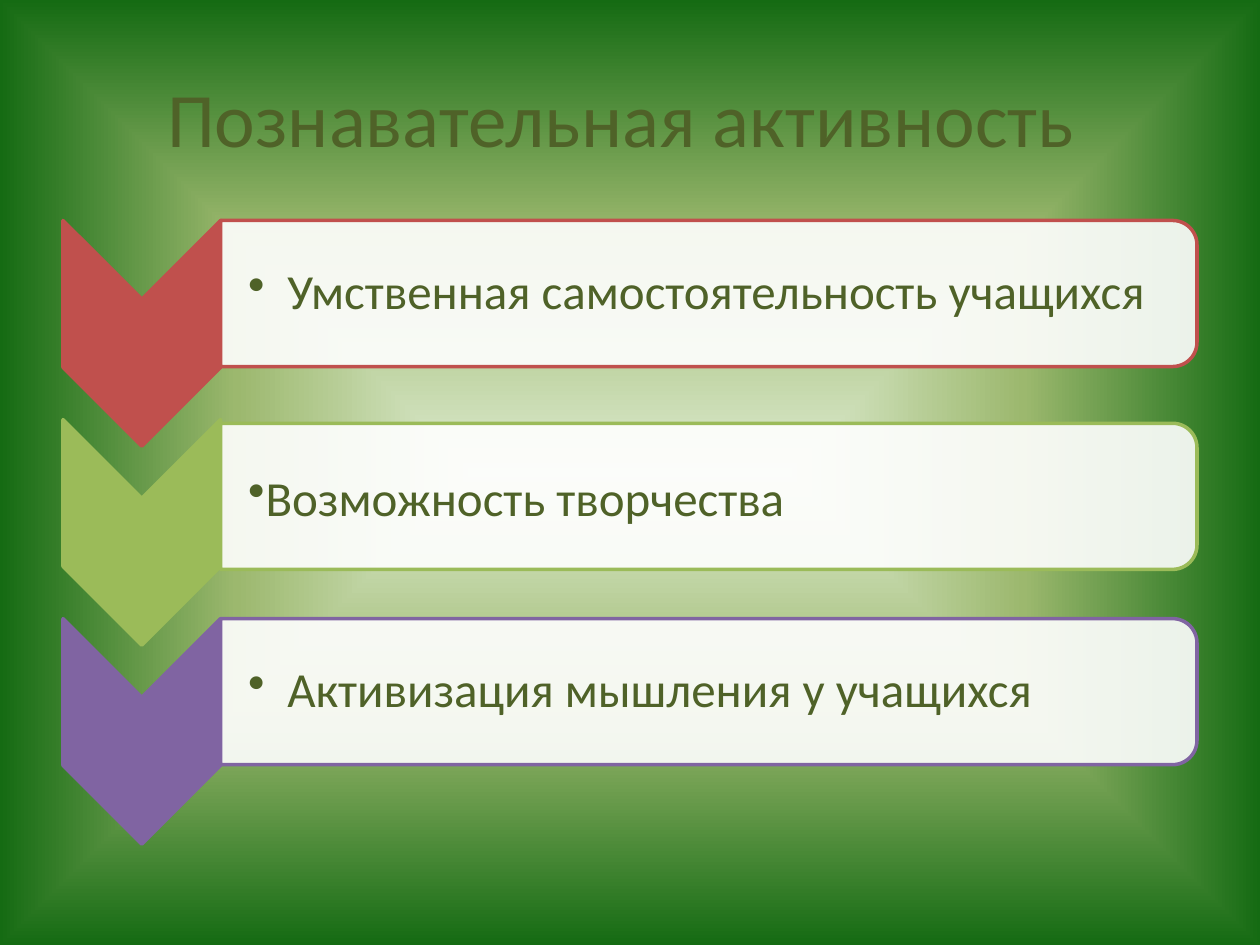
from collections import namedtuple

from pptx import Presentation
from pptx.dml.color import RGBColor
from pptx.enum.shapes import MSO_SHAPE as Preset
from pptx.enum.text import MSO_ANCHOR as Anchor, PP_ALIGN as Align
from pptx.oxml import parse_xml
from pptx.oxml.ns import nsdecls, qn
from pptx.util import Inches, Pt

Box = namedtuple("Box", "left top width height")

# Grid of 40 columns by 30 rows, square cells
COLUMNS, ROWS, CELL = 40, 30, Inches(0.25)
FONT, INK, WHITE = "Calibri", "4F6228", "FFFFFF"
BACKGROUND = [(0, "DDEBCF"), (50, "9CB86E"), (100, "156B13")]

# Row pitch, and the sizes of the parts of one step
PITCH, CHEVRON_WIDTH, CHEVRON_HEIGHT, PANEL_HEIGHT = 6.32, 5, 7.16, 4.64
INDENT = Inches(0.31)

# Label, colour, panel shift in rows, hanging bullet
STEPS = [
    ("Умственная самостоятельность учащихся", "C0504D", 0, True),
    ("Возможность творчества", "9BBB59", 0.12, False),
    ("Активизация мышления у учащихся", "8064A2", 0, True),
]


def color(value):
    return RGBColor.from_string(value)


def cells(box):
    return [round(length * CELL) for length in box]


def paint_background(page):
    stops = "".join(
        f'<a:gs pos="{share * 1000}"><a:srgbClr val="{value}"/></a:gs>'
        for share, value in BACKGROUND)
    page.element.cSld.insert(0, parse_xml(
        f'<p:bg {nsdecls("p", "a")}><p:bgPr><a:gradFill><a:gsLst>{stops}</a:gsLst>'
        '<a:path path="shape"><a:fillToRect l="50000" t="50000" r="50000" b="50000"/>'
        '</a:path></a:gradFill><a:effectLst/></p:bgPr></p:bg>'))


def add_turned(page, preset, box, fill, line):
    """Add a preset turned a quarter clockwise so that it covers the box."""
    left = box.left + (box.width - box.height) / 2
    top = box.top + (box.height - box.width) / 2
    shape = page.shapes.add_shape(
        preset, *cells(Box(left, top, box.height, box.width)))
    shape.rotation = 90
    shape.shadow.inherit = False
    shape.fill.solid()
    shape.fill.fore_color.rgb = color(fill)
    shape.line.color.rgb = color(line)
    shape.line.width = Pt(2)
    return shape


def add_text(page, box, text, size, margins, align):
    frame = page.shapes.add_textbox(*cells(box)).text_frame
    settings = {"word_wrap": True, "vertical_anchor": Anchor.MIDDLE}
    sides = ("left", "top", "right", "bottom")
    settings.update({f"margin_{side}": Inches(gap) for side, gap in zip(sides, margins)})
    for name, value in settings.items():
        setattr(frame, name, value)
    para = frame.paragraphs[0]
    para.alignment = align
    span = para.add_run()
    span.text = text
    for name, value in {"name": FONT, "size": Pt(size)}.items():
        setattr(span.font, name, value)
    span.font.color.rgb = color(INK)
    return para


def add_bullet(para, hanging):
    props = para._p.get_or_add_pPr()
    indent = INDENT if hanging else 0
    props.set("marL", str(indent))
    props.set("indent", str(-indent))
    if hanging:
        para.line_spacing = 0.9
        para.space_after = Pt(4.2)
    props.append(parse_xml(f'<a:buChar {nsdecls("a")} char="•"/>'))


def add_step(page, box, label, accent, shift, hanging):
    # Chevron pointing down
    add_turned(page, Preset.CHEVRON,
               Box(box.left, box.top, CHEVRON_WIDTH, box.height), accent, accent)

    # Translucent panel, rounded on the right
    panel = Box(box.left + CHEVRON_WIDTH, box.top + shift,
                box.width - CHEVRON_WIDTH, PANEL_HEIGHT)
    shape = add_turned(page, Preset.ROUND_2_SAME_RECTANGLE, panel, WHITE, accent)
    tint = shape.fill._xPr.find(qn("a:solidFill"))[0]
    tint.append(parse_xml(f'<a:alpha {nsdecls("a")} val="90000"/>'))

    # Label inside the panel
    inset = 0.22
    area = Box(panel.left, panel.top + inset,
               panel.width - inset, panel.height - 2 * inset)
    para = add_text(page, area, label, 28, (0.22, 0.02, 0.02, 0.02), Align.LEFT)
    add_bullet(para, hanging)


def add_steps(page, box):
    for index, step in enumerate(STEPS):
        row = Box(box.left, box.top + index * PITCH, box.width, CHEVRON_HEIGHT)
        add_step(page, row, *step)


def main():
    deck = Presentation()
    deck.slide_width, deck.slide_height = COLUMNS * CELL, ROWS * CELL
    page = deck.slides.add_slide(deck.slide_layouts[6])
    paint_background(page)
    add_text(page, Box(2, 1.2, 36, 5), "Познавательная активность ", 44,
             (0.1, 0.05, 0.1, 0.05), Align.CENTER)
    add_steps(page, Box(2, 7, 36, 2 * PITCH + CHEVRON_HEIGHT))
    deck.save("out.pptx")


if __name__ == "__main__":
    main()
